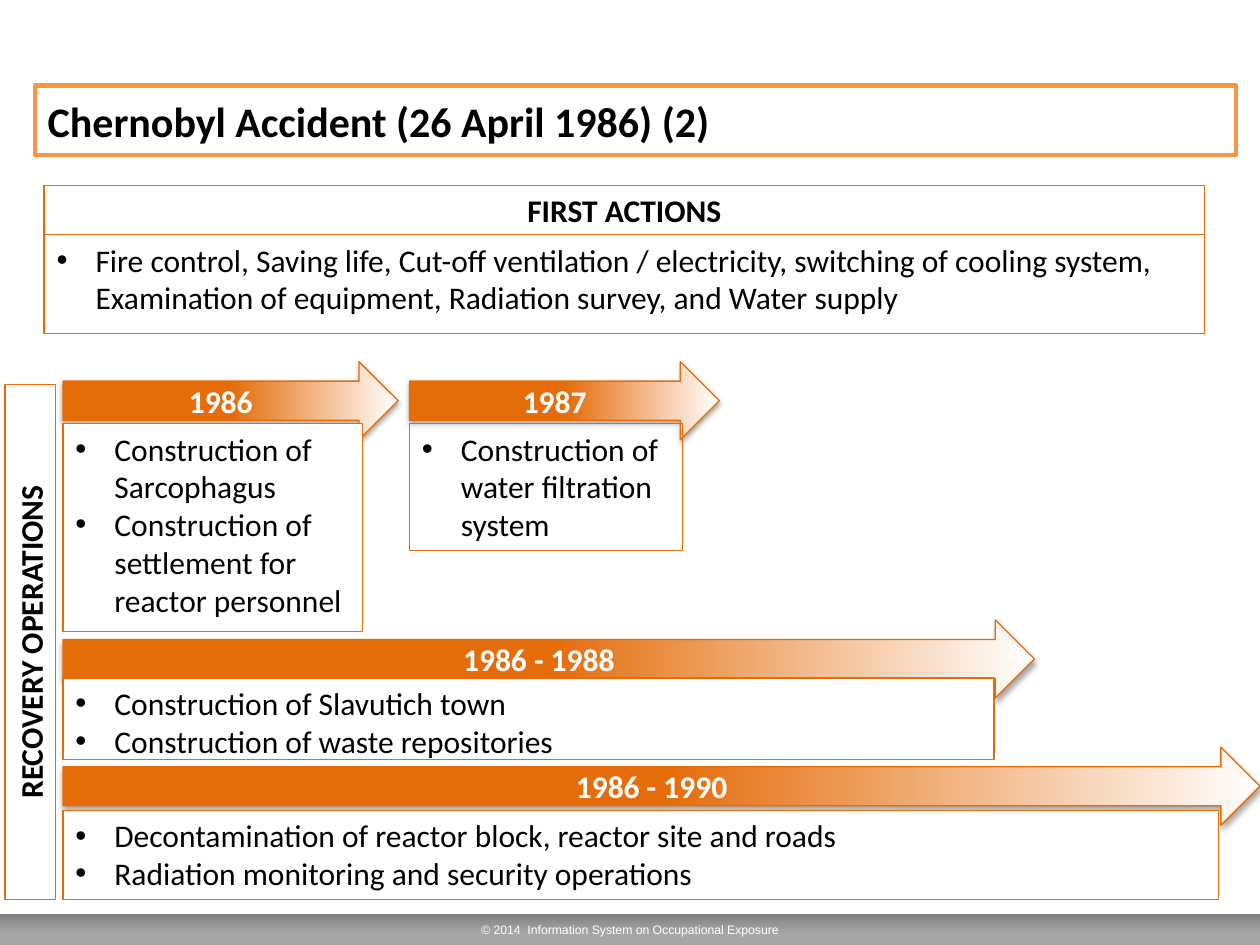
from lxml import etree
from pptx import Presentation
from pptx.dml.color import RGBColor
from pptx.enum.shapes import MSO_SHAPE
from pptx.enum.text import MSO_ANCHOR, PP_ALIGN
from pptx.oxml.ns import qn
from pptx.util import Inches, Pt

RECTANGLE, ARROW = MSO_SHAPE.RECTANGLE, MSO_SHAPE.RIGHT_ARROW
LEFT, CENTER = PP_ALIGN.LEFT, PP_ALIGN.CENTER
TOP, MIDDLE = MSO_ANCHOR.TOP, MSO_ANCHOR.MIDDLE

COLORS = {
    "orange": "E46C0A",
    "title_line": "F79646",
    "white": "FFFFFF",
    "black": "000000",
    "footer_dark": "808080",
    "footer_light": "A6A6A6",
}

ARROW_HEIGHT = 0.62
TIMELINE_LEFT = 0.5

# label, arrow (left, top, width), box (top, width, height), box fill, items
PERIODS = [
    ("1986 - 1990", (TIMELINE_LEFT, 5.93, 9.5), (6.43, 9.17, 0.71), "white",
     ["Decontamination of reactor block, reactor site and roads",
      "Radiation monitoring and security operations"]),
    ("1986 - 1988", (TIMELINE_LEFT, 4.92, 7.71), (5.38, 7.39, 0.65), "white",
     ["Construction of Slavutich town",
      "Construction of waste repositories"]),
    ("1986", (TIMELINE_LEFT, 2.87, 2.66), (3.36, 2.38, 1.65), "white",
     ["Construction of Sarcophagus",
      "Construction of settlement for reactor personnel"]),
    ("1987", (3.25, 2.87, 2.46), (3.36, 2.17, 1.01), None,
     ["Construction of water filtration system"]),
]


def rgb(name):
    return RGBColor.from_string(COLORS[name])


def add_block(slide, box, kind=RECTANGLE, fill=None, line="orange", line_width=0.75):
    shape = slide.shapes.add_shape(kind, *(Inches(length) for length in box))
    shape.shadow.inherit = False
    if fill:
        shape.fill.solid()
        shape.fill.fore_color.rgb = rgb(fill)
    else:
        shape.fill.background()
    if line:
        shape.line.color.rgb = rgb(line)
        shape.line.width = Pt(line_width)
    else:
        shape.line.fill.background()
    return shape


def set_gradient(shape, stops, angle):
    shape.fill.gradient()
    shape.fill.gradient_angle = angle
    for stop, (position, color) in zip(shape.fill.gradient_stops, stops):
        stop.position = position
        stop.color.rgb = rgb(color)


def add_shadow(shape):
    effects = shape._element.spPr.find(qn("a:effectLst"))
    shadow = etree.SubElement(effects, qn("a:outerShdw"), blurRad=str(Pt(3.1)),
                              dist=str(Pt(1.8)), dir="5400000", rotWithShape="0")
    color = etree.SubElement(shadow, qn("a:srgbClr"), val=COLORS["black"])
    etree.SubElement(color, qn("a:alpha"), val="35000")


def add_bullet(paragraph):
    properties = paragraph._p.get_or_add_pPr()
    properties.set("marL", str(Inches(0.31)))
    properties.set("indent", str(-Inches(0.31)))
    etree.SubElement(properties, qn("a:buFont"), typeface="Arial")
    etree.SubElement(properties, qn("a:buChar"), char="•")


def write(shape, lines, size=18, color="black", bold=False, align=LEFT,
          anchor=TOP, font="Calibri", bullets=False):
    frame = shape.text_frame
    frame.word_wrap = True
    frame.vertical_anchor = anchor
    for index, line in enumerate(lines):
        paragraph = frame.add_paragraph() if index else frame.paragraphs[0]
        paragraph.text = line
        paragraph.alignment = align
        if bullets:
            add_bullet(paragraph)
        paragraph.font.name = font
        paragraph.font.size = Pt(size)
        paragraph.font.bold = bold
        paragraph.font.color.rgb = rgb(color)


def add_footer(slide, box):
    bar = add_block(slide, box, line=None)
    set_gradient(bar, [(0, "footer_dark"), (0.64, "footer_light")], 270)
    write(bar, ["© 2014  Information System on Occupational Exposure"], size=7,
          color="white", align=CENTER, anchor=MIDDLE, font="Arial")


def add_title(slide, box):
    title = add_block(slide, box, line="title_line", line_width=2.5)
    write(title, ["Chernobyl Accident (26 April 1986) (2)"], size=24, bold=True,
          anchor=MIDDLE)


def add_first_actions(slide, box):
    left, top, width, height = box
    header_height = 0.39
    header = add_block(slide, (left, top, width, header_height))
    write(header, ["FIRST ACTIONS"], bold=True, align=CENTER)
    body = add_block(slide, (left, top + header_height, width, height - header_height),
                     fill="white")
    write(body, ["Fire control, Saving life, Cut-off ventilation / electricity, "
                 "switching of cooling system, Examination of equipment, "
                 "Radiation survey, and Water supply"], bullets=True)


def add_side_label(slide, box):
    # The box is the upright strip; the shape is laid flat on its centre, then turned
    left, top, width, height = box
    shift = (height - width) / 2
    label = add_block(slide, (left - shift, top + shift, height, width))
    label.rotation = 270
    write(label, ["RECOVERY OPERATIONS"], bold=True, align=CENTER)


def add_timeline(slide, periods):
    # Arrows lie behind all boxes
    for label, arrow_box, *_ in periods:
        arrow = add_block(slide, (*arrow_box, ARROW_HEIGHT), ARROW)
        set_gradient(arrow, [(0.5, "orange"), (1, "white")], 0)
        add_shadow(arrow)
        write(arrow, [label], color="white", bold=True, align=CENTER, anchor=MIDDLE)
    for _, (left, *_), box, fill, items in periods:
        write(add_block(slide, (left, *box), fill=fill), items, bullets=True)


def main():
    presentation = Presentation()
    presentation.slide_width, presentation.slide_height = Inches(10), Inches(7.5)
    slide = presentation.slides.add_slide(presentation.slide_layouts[6])
    add_footer(slide, (0, 7.25, 10, 0.25))
    add_timeline(slide, PERIODS)
    add_title(slide, (0.28, 0.68, 9.53, 0.55))
    add_side_label(slide, (0.04, 3.05, 0.4, 4.09))
    add_first_actions(slide, (0.35, 1.47, 9.21, 1.18))
    presentation.save("out.pptx")


if __name__ == "__main__":
    main()
